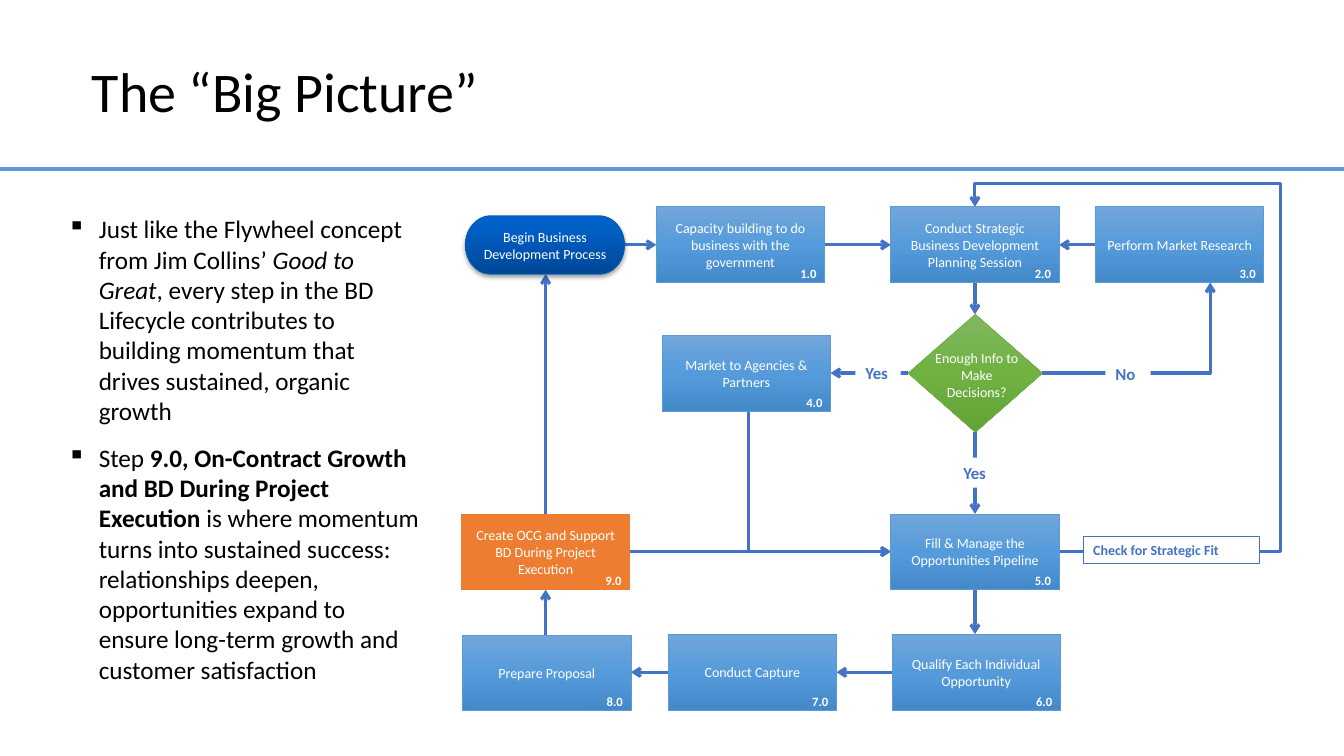
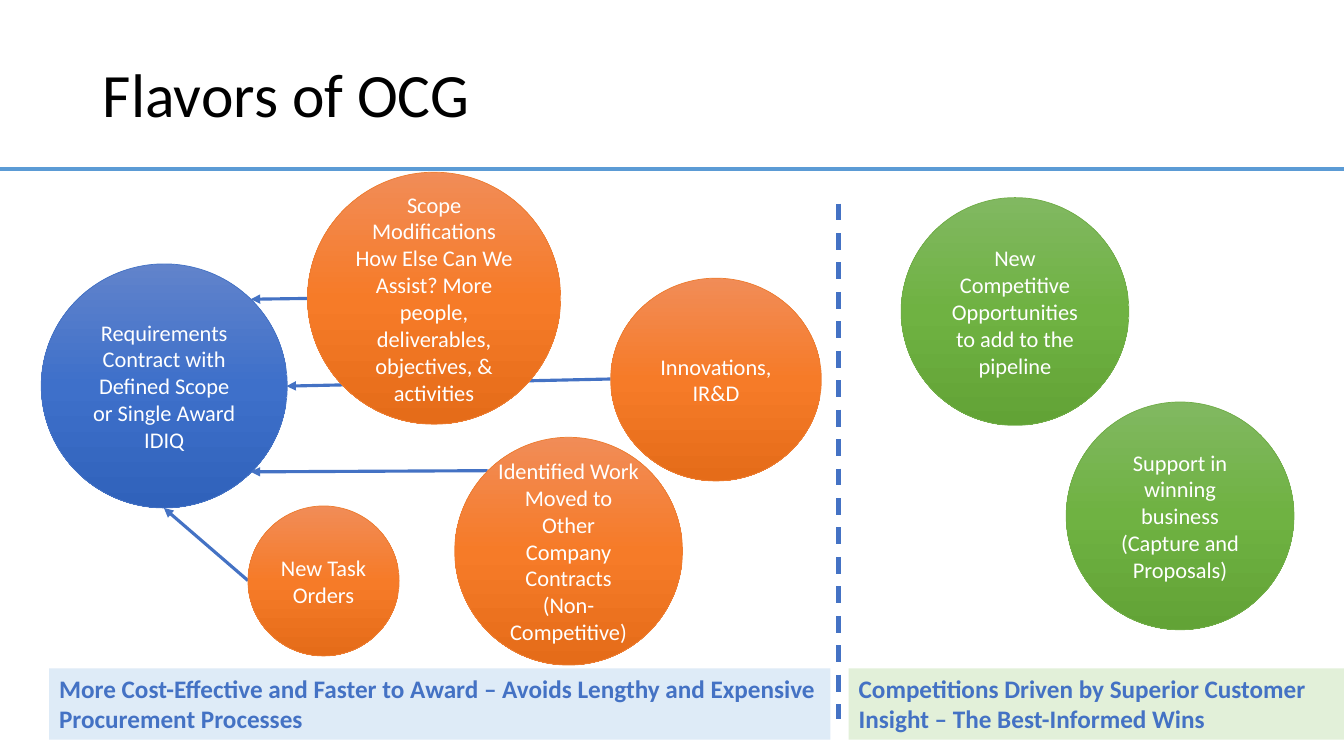
from copy import deepcopy

from lxml.etree import SubElement
from pptx import Presentation
from pptx.dml.color import RGBColor
from pptx.enum.dml import MSO_LINE
from pptx.enum.shapes import MSO_CONNECTOR, MSO_SHAPE
from pptx.enum.text import MSO_ANCHOR, MSO_AUTO_SIZE, PP_ALIGN
from pptx.oxml.ns import qn
from pptx.util import Cm, Pt

FONT = "Calibri"
BLACK = RGBColor(0x00, 0x00, 0x00)
WHITE = RGBColor(0xFF, 0xFF, 0xFF)
BLUE = RGBColor(0x44, 0x72, 0xC4)
SKY = RGBColor(0x5B, 0x9B, 0xD5)
NAVY = RGBColor(0x00, 0x5F, 0xB2)
ORANGE = RGBColor(0xED, 0x7D, 0x31)
GREEN = RGBColor(0x70, 0xAD, 0x47)
PALE_BLUE = RGBColor(0xDE, 0xEB, 0xF7)
PALE_GREEN = RGBColor(0xE2, 0xF0, 0xD9)

# Gradient stops from top to bottom: (position, colour)
SKY_FADE = [(0, RGBColor(0x71, 0xA6, 0xDB)), (0.5, RGBColor(0x55, 0x9B, 0xDB)),
            (1, RGBColor(0x44, 0x8A, 0xCA))]
BLUE_FADE = [(0, RGBColor(0x61, 0x83, 0xCB)), (0.5, RGBColor(0x3E, 0x70, 0xCA)),
             (1, RGBColor(0x30, 0x62, 0xBB))]
ORANGE_FADE = [(0, RGBColor(0xF1, 0x8C, 0x57)), (0.5, RGBColor(0xF6, 0x7B, 0x28)),
               (1, RGBColor(0xE5, 0x6C, 0x19))]
GREEN_FADE = [(0, RGBColor(0x81, 0xB8, 0x61)), (0.5, RGBColor(0x6F, 0xB2, 0x42)),
              (1, RGBColor(0x62, 0xA3, 0x36))]
NAVY_FADE = [(0, RGBColor(0x00, 0x61, 0xCB)), (0.2, RGBColor(0x00, 0x60, 0xC6)),
             (1, RGBColor(0x00, 0x47, 0x97))]


def add_box(s, kind, at, text, size, color=WHITE, fill=None, line=None, width=0.5,
            bold=False, align=PP_ALIGN.CENTER, anchor=MSO_ANCHOR.MIDDLE):
    """Add a shape, or a text box if kind is None; a list as fill is a gradient."""
    at = [Cm(v) for v in at]
    if kind is None:
        sp = s.shapes.add_textbox(*at)
    else:
        sp = s.shapes.add_shape(kind, *at)
        sp.shadow.inherit = False
        if isinstance(fill, list):
            sp.fill.gradient()
            sp.fill.gradient_angle = 270
            stops = next(sp.element.iter(qn("a:gsLst")))
            stops.append(deepcopy(stops[-1]))
            for stop, (position, rgb) in zip(sp.fill.gradient_stops, fill):
                stop.position = position
                stop.color.rgb = rgb
        else:
            sp.fill.solid()
            sp.fill.fore_color.rgb = fill
        if line is None:
            sp.line.fill.background()
        else:
            sp.line.color.rgb = line
            sp.line.width = Pt(width)
    tf = sp.text_frame
    tf.word_wrap = True
    tf.vertical_anchor = anchor
    for i, words in enumerate(text.split("\n") if text else []):
        p = tf.add_paragraph() if i else tf.paragraphs[0]
        p.alignment = align
        r = p.add_run()
        r.text = words
        r.font.name = FONT
        r.font.size = Pt(size)
        r.font.bold = bold
        r.font.color.rgb = color
    return sp


def add_line(s, points, head=None, color=BLUE, width=2.25):
    """Add a straight connector, or an open outline when there are bends."""
    points = [(Cm(x), Cm(y)) for x, y in points]
    if len(points) == 2:
        ln = s.shapes.add_connector(MSO_CONNECTOR.STRAIGHT, *points[0], *points[1])
    else:
        builder = s.shapes.build_freeform(*points[0])
        builder.add_line_segments(points[1:], close=False)
        ln = builder.convert_to_shape()
        ln.fill.background()
    ln.line.color.rgb = color
    ln.line.width = Pt(width)
    if head:
        SubElement(ln.line._get_or_add_ln(), qn("a:tailEnd"), type=head)
    SubElement(ln.element.spPr, qn("a:effectLst"))
    return ln


prs = Presentation()
prs.slide_width, prs.slide_height = Cm(33.87), Cm(19.05)
layout = prs.slide_layouts[5]

slides = []
for text, size, at in [
    ("The “Big Picture”", 40, (2.06, 1.55, 23.29, 1.68)),
    ("Flavors of OCG", 44, (2.34, 1.02, 15.24, 2.9)),
]:
    s = prs.slides.add_slide(layout)
    title = s.shapes.title
    title.left, title.top, title.width, title.height = [Cm(v) for v in at]
    tf = title.text_frame
    tf.auto_size = MSO_AUTO_SIZE.NONE
    tf.vertical_anchor = MSO_ANCHOR.MIDDLE
    p = tf.paragraphs[0]
    p.alignment = PP_ALIGN.LEFT
    p.line_spacing = 0.9
    r = p.add_run()
    r.text = text
    r.font.name = FONT
    r.font.size = Pt(size)
    r.font.color.rgb = BLACK
    slides.append(s)

# The rule below the title belongs to the layout
rule = add_line(slides[0], [(0, 4.25), (33.87, 4.25)], color=SKY, width=3)
layout.shapes.element.append(rule.element)

# Slide 1: process flow
s = slides[0]
BOX_W, BOX_H = 4.24, 1.91
ROW_1, ROW_2, ROW_3, ROW_4 = 6.17, 9.4, 13.9, 16.94
LEFT_X, MAIN_X = 13.75, 24.57

for points in [
    [(15.74, ROW_1), (16.54, ROW_1)],
    [(20.78, ROW_1), (22.45, ROW_1)],
    [(27.61, ROW_1), (26.69, ROW_1)],
    [(MAIN_X, 7.12), (MAIN_X, 7.92)],
    [(MAIN_X, 10.89), (MAIN_X, 12.95)],
    [(22.89, ROW_2), (20.93, ROW_2)],
    [(26.27, ROW_2), (30.5, ROW_2), (30.5, 7.12)],
    [(18.87, 10.37), (18.87, ROW_3), (22.45, ROW_3)],
    [(15.87, ROW_3), (22.45, ROW_3)],
    [(26.69, ROW_3), (32.28, ROW_3), (32.28, 4.62), (MAIN_X, 4.62), (MAIN_X, 5.21)],
    [(MAIN_X, 14.86), (MAIN_X, 15.98)],
    [(22.48, ROW_4), (21.08, ROW_4)],
    [(16.84, ROW_4), (15.9, ROW_4)],
    [(LEFT_X, 16), (LEFT_X, 14.86)],
    [(LEFT_X, 12.95), (LEFT_X, 6.91)],
]:
    add_line(s, points, "arrow")

start = add_box(s, MSO_SHAPE.FLOWCHART_TERMINATOR, (11.73, 5.44, 4.01, 1.47),
                "Begin Business Development Process", 10, fill=NAVY_FADE, line=NAVY, width=0.75)
shadow = SubElement(start.element.spPr.find(qn("a:effectLst")), qn("a:outerShdw"),
                    blurRad=str(Pt(3.1)), dist=str(Pt(1.8)), dir="5400000", rotWithShape="0")
shade = SubElement(shadow, qn("a:srgbClr"), val="000000")
SubElement(shade, qn("a:alpha"), val="35000")

steps = [
    (16.54, 5.21, "Capacity building to do business with the government"),
    (22.45, 5.21, "Conduct Strategic Business Development Planning Session"),
    (27.61, 5.21, "Perform Market Research"),
    (16.69, 8.46, "Market to Agencies & Partners"),
    (22.45, 12.95, "Fill & Manage the Opportunities Pipeline"),
    (22.48, 15.98, "Qualify Each Individual Opportunity"),
    (16.84, 15.98, "Conduct Capture"),
    (11.66, 16, "Prepare Proposal"),
    (11.63, 12.95, "Create OCG and Support BD During Project Execution"),
]
for number, (x, y, text) in enumerate(steps, 1):
    last = number == len(steps)
    add_box(s, MSO_SHAPE.FLOWCHART_PROCESS, (x, y, BOX_W, BOX_H), text, 10,
            fill=ORANGE if last else SKY_FADE, line=None if last else SKY)
    add_box(s, None, (x + 3.38, y + 1.37, 1.27, 0.64), f"{number}.0", 9, bold=True,
            align=PP_ALIGN.LEFT, anchor=MSO_ANCHOR.TOP)

add_box(s, MSO_SHAPE.FLOWCHART_DECISION, (22.89, 7.92, 3.38, 2.97), "", 10,
        fill=GREEN_FADE, line=GREEN)
add_box(s, None, (23.32, 8.69, 2.59, 1.55), "Enough Info to Make Decisions?", 10,
        anchor=MSO_ANCHOR.TOP)

for at, text, size, line in [
    ((27.86, 9.04, 1.14, 0.76), "No", 12, None),
    ((24.03, 11.53, 1.14, 0.76), "Yes", 12, None),
    ((21.56, 9.02, 1.14, 0.76), "Yes", 12, None),
    ((27.3, 13.51, 4.45, 0.69), "Check for Strategic Fit", 10, BLUE),
]:
    add_box(s, MSO_SHAPE.RECTANGLE, at, text, size, BLUE, WHITE, line, 0.75, True,
            PP_ALIGN.LEFT, MSO_ANCHOR.TOP)

bullets = [
    [("Just like the Flywheel concept from Jim Collins’ ", ""),
     ("Good to Great", "i"),
     (", every step in the BD Lifecycle contributes to building momentum that drives "
      "sustained, organic growth", "")],
    [("Step ", ""),
     ("9.0, On-Contract Growth and BD During Project Execution ", "b"),
     ("is where momentum turns into sustained success: relationships deepen, opportunities "
      "expand to ensure long-term growth and customer satisfaction", "")],
]
tf = add_box(s, None, (1.45, 5.26, 9.37, 13), "", 18, anchor=MSO_ANCHOR.TOP).text_frame
for i, runs in enumerate(bullets):
    p = tf.add_paragraph() if i else tf.paragraphs[0]
    pPr = p._p.get_or_add_pPr()
    pPr.set("marL", str(Cm(0.79)))
    pPr.set("indent", str(-Cm(0.79)))
    SubElement(pPr, qn("a:buChar"), char="▪")
    if i:
        p.space_before = Pt(12)
    for text, style in runs:
        r = p.add_run()
        r.text = text
        r.font.name = FONT
        r.font.size = Pt(18)
        r.font.color.rgb = BLACK
        r.font.italic = style == "i"
        r.font.bold = style == "b"

# Slide 2: circles around the contract, and new competitions
s = slides[1]
for points in [
    [(15.39, 9.55), (7.22, 9.73)],
    [(12.29, 11.86), (6.32, 11.89)],
    [(7.75, 7.52), (6.32, 7.54)],
    [(6.25, 14.63), (4.13, 12.8)],
]:
    add_line(s, points, "triangle")

for at, text, fill, line in [
    ((1.04, 6.65, 6.2, 6.15),
     "Requirements Contract with Defined Scope or Single Award IDIQ", BLUE_FADE, BLUE),
    ((7.75, 4.34, 6.38, 6.35),
     "Scope Modifications How Else Can We Assist? More people, deliverables, objectives, "
     "& activities", ORANGE_FADE, ORANGE),
    ((11.46, 11.02, 5.74, 5.74),
     "Identified Work Moved to Other Company Contracts (Non-Competitive)", ORANGE_FADE, ORANGE),
    ((15.39, 7.01, 5.31, 5.11), "Innovations,\nIR&D", ORANGE_FADE, ORANGE),
    ((6.25, 12.75, 3.81, 3.78), "New Task Orders", ORANGE_FADE, ORANGE),
    ((22.71, 4.98, 5.74, 5.74),
     "New Competitive Opportunities to add to the pipeline", GREEN_FADE, GREEN),
    ((26.87, 10.13, 5.74, 5.74),
     "Support in winning business (Capture and Proposals)", GREEN_FADE, GREEN),
]:
    add_box(s, MSO_SHAPE.OVAL, at, text, 16, fill=fill, line=line)

divider = add_line(s, [(21.13, 5.13), (21.13, 18.11)], width=3)
divider.line.dash_style = MSO_LINE.DASH

for x, width, fill, text in [
    (1.24, 19.69, PALE_BLUE, "More Cost-Effective and Faster to Award – Avoids Lengthy and "
                             "Expensive Procurement Processes"),
    (21.39, 12.48, PALE_GREEN, "Competitions Driven by Superior Customer Insight – "
                               "The Best-Informed Wins"),
]:
    add_box(s, MSO_SHAPE.RECTANGLE, (x, 16.84, width, 1.8), text, 18, BLUE, fill,
            bold=True, align=PP_ALIGN.LEFT, anchor=MSO_ANCHOR.TOP)

prs.save("out.pptx")
